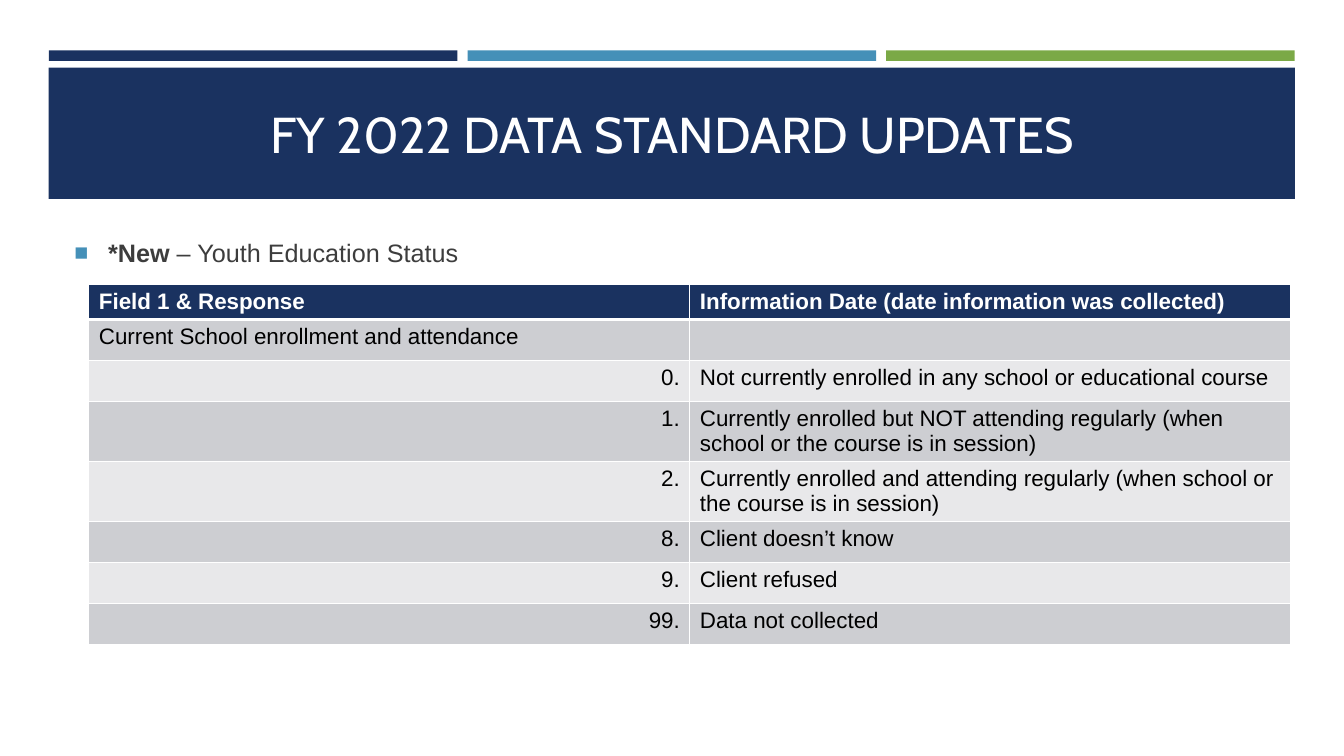
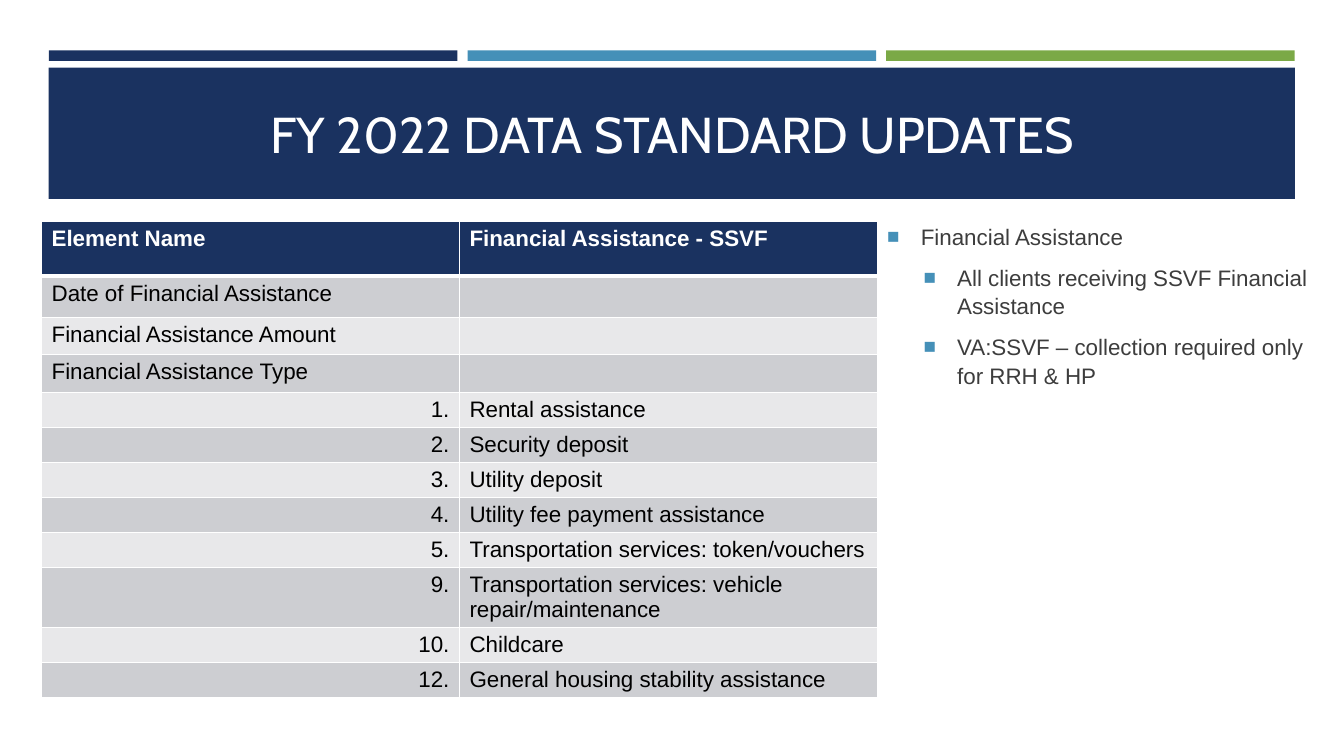
from lxml import etree
from pptx import Presentation
from pptx.dml.color import RGBColor
from pptx.enum.shapes import MSO_SHAPE
from pptx.enum.text import MSO_ANCHOR, MSO_AUTO_SIZE, PP_ALIGN
from pptx.oxml.ns import qn
from pptx.util import Pt

RECT = MSO_SHAPE.RECTANGLE
MIDDLE = MSO_ANCHOR.MIDDLE
NO_FIT = MSO_AUTO_SIZE.NONE
LEFT, CENTER, RIGHT = PP_ALIGN.LEFT, PP_ALIGN.CENTER, PP_ALIGN.RIGHT

NAVY = RGBColor(0x1A, 0x32, 0x60)
BLUE = RGBColor(0x45, 0x90, 0xB8)
GREEN = RGBColor(0x7B, 0xA9, 0x46)
WHITE = RGBColor(0xFF, 0xFF, 0xFF)
BLACK = RGBColor(0x00, 0x00, 0x00)
GREY = RGBColor(0x3D, 0x3D, 0x3D)
ROW_DARK = RGBColor(0xCD, 0xCE, 0xD2)
ROW_LIGHT = RGBColor(0xE8, 0xE8, 0xEA)

TITLE = "FY 2022 DATA STANDARD UPDATES"
EDUCATION = [
    ("Field 1 & Response", "Information Date (date information was collected)"),
    ("Current School enrollment and attendance", ""),
    ("0.", "Not currently enrolled in any school or educational course"),
    ("1.", "Currently enrolled but NOT attending regularly "
           "(when school or the course is in session)"),
    ("2.", "Currently enrolled and attending regularly "
           "(when school or the course is in session)"),
    ("8.", "Client doesn’t know"),
    ("9.", "Client refused"),
    ("99.", "Data not collected"),
]
ASSISTANCE = [
    ("Element Name", "Financial Assistance - SSVF"),
    ("Date of Financial Assistance", ""),
    ("Financial Assistance Amount", ""),
    ("Financial Assistance Type", ""),
    ("1.", "Rental assistance"),
    ("2.", "Security deposit"),
    ("3.", "Utility deposit"),
    ("4.", "Utility fee payment assistance"),
    ("5.", "Transportation services: token/vouchers"),
    ("9.", "Transportation services: vehicle repair/maintenance"),
    ("10.", "Childcare"),
    ("12.", "General housing stability assistance"),
]


class Deck:
    """Shared style and the slide being built; lengths are in points."""

    title_font = {"name": "Cabin", "size": Pt(36), "bold": False}
    body_font = {"name": "Arial", "bold": False}
    cell_size = 16
    indents = (24, 50)

    def __init__(self):
        self.prs = Presentation()
        self.prs.slide_width, self.prs.slide_height = Pt(960), Pt(540)
        self.layout = self.prs.slide_layouts[1]
        self.s = None

    def place(self, sp, left, top, width, height):
        box = {"left": left, "top": top, "width": width, "height": height}
        for key, value in box.items():
            setattr(sp, key, Pt(value))

    def run(self, p, text, **font):
        r = p.add_run()
        r.text = text
        color = font.pop("color")
        for key, value in font.items():
            setattr(r.font, key, value)
        r.font.color.rgb = color

    def band(self, color, *box):
        sp = self.s.shapes.add_shape(RECT, *(Pt(v) for v in box))
        sp.shadow.inherit = False
        sp.fill.solid()
        sp.fill.fore_color.rgb = color
        sp.line.fill.background()
        tree = self.layout.shapes._spTree
        sp._element.nvSpPr.cNvPr.set("id", str(20 + len(tree)))
        tree.append(sp._element)

    def bands(self):
        for i, color in enumerate((NAVY, BLUE, GREEN)):
            self.band(color, 35 + 299 * i, 36, 291.8, 7.5)
        self.band(NAVY, 34.8, 48.3, 890.2, 93.8)

    def slide(self, title):
        first = self.s is None
        self.s = self.prs.slides.add_slide(self.layout)
        if first:
            self.bands()
        sp = self.s.shapes.title
        self.place(sp, 46, 55.5, 868, 80)
        tf = sp.text_frame
        tf.vertical_anchor, tf.auto_size = MIDDLE, NO_FIT
        p = tf.paragraphs[0]
        p.alignment = CENTER
        self.run(p, title, color=WHITE, **self.title_font)

    def bullets(self, items, size, *box):
        sp = self.s.placeholders[1]
        self.place(sp, *box)
        tf = sp.text_frame
        tf.vertical_anchor, tf.auto_size = MIDDLE, NO_FIT
        for i, (level, strong, text) in enumerate(items):
            p = tf.add_paragraph() if i else tf.paragraphs[0]
            p.level, p.space_after, p.line_spacing = level, Pt(6), 1.05
            self.bullet(p)
            font = {**self.body_font, "size": Pt(size), "color": GREY}
            if strong:
                self.run(p, strong, **{**font, "bold": True})
            self.run(p, text, **font)

    def bullet(self, p):
        pPr = p._p.get_or_add_pPr()
        pPr.set("marL", str(Pt(self.indents[p.level])))
        pPr.set("indent", str(-Pt(self.indents[0])))
        clr = etree.SubElement(pPr, qn("a:buClr"))
        etree.SubElement(clr, qn("a:srgbClr"), val=str(BLUE))
        etree.SubElement(pPr, qn("a:buSzPct"), val="92000")
        etree.SubElement(pPr, qn("a:buFont"), typeface="Arial")
        etree.SubElement(pPr, qn("a:buChar"), char="■")

    def borders(self, cell, row):
        tcPr = cell._tc.get_or_add_tcPr()
        widths = {"lnL": 1, "lnR": 1, "lnT": 3 if row == 1 else 1,
                  "lnB": 3 if row == 0 else 1}
        for tag, width in widths.items():
            ln = etree.SubElement(tcPr, qn(f"a:{tag}"), w=str(Pt(width)))
            fill = etree.SubElement(ln, qn("a:solidFill"))
            etree.SubElement(fill, qn("a:srgbClr"), val=str(WHITE))

    def cell(self, cell, row, text, align):
        header = row == 0
        self.borders(cell, row)
        cell.fill.solid()
        stripe = ROW_DARK if row % 2 else ROW_LIGHT
        cell.fill.fore_color.rgb = NAVY if header else stripe
        p = cell.text_frame.paragraphs[0]
        p.alignment = align
        if text:
            self.run(p, text, name="Arial", size=Pt(self.cell_size),
                     bold=header, color=WHITE if header else BLACK)
        else:
            etree.SubElement(p._p, qn("a:endParaRPr"),
                             sz=str(self.cell_size * 100))

    def table(self, rows, heights, left, top, width):
        frame = self.s.shapes.add_table(
            len(rows), 2, Pt(left), Pt(top), Pt(width), Pt(sum(heights)))
        tbl = frame.table
        for i, (texts, height) in enumerate(zip(rows, heights)):
            tbl.rows[i].height = Pt(height)
            for j, text in enumerate(texts):
                align = RIGHT if j == 0 and text.endswith(".") else LEFT
                self.cell(tbl.cell(i, j), i, text, align)


def main():
    deck = Deck()

    deck.slide(TITLE)
    deck.bullets([(0, "*New", " – Youth Education Status")],
                 18, 46, 155.5, 868, 48)
    heights = [25] + [29.3] * 2 + [42.9] * 2 + [29.3] * 3
    deck.table(EDUCATION, heights, 63.5, 203.3, 858.6)

    deck.slide(TITLE)
    deck.bullets([
        (0, "", "Financial Assistance"),
        (1, "", "All clients receiving SSVF Financial Assistance"),
        (1, "", "VA:SSVF – collection required only for RRH & HP"),
    ], 16, 626.5, 157.5, 333.5, 121)
    heights = [39.3, 29.3] + [25] * 7 + [42.9] + [25] * 2
    deck.table(ASSISTANCE, heights, 29.7, 158, 597)

    deck.prs.save("out.pptx")


if __name__ == "__main__":
    main()
